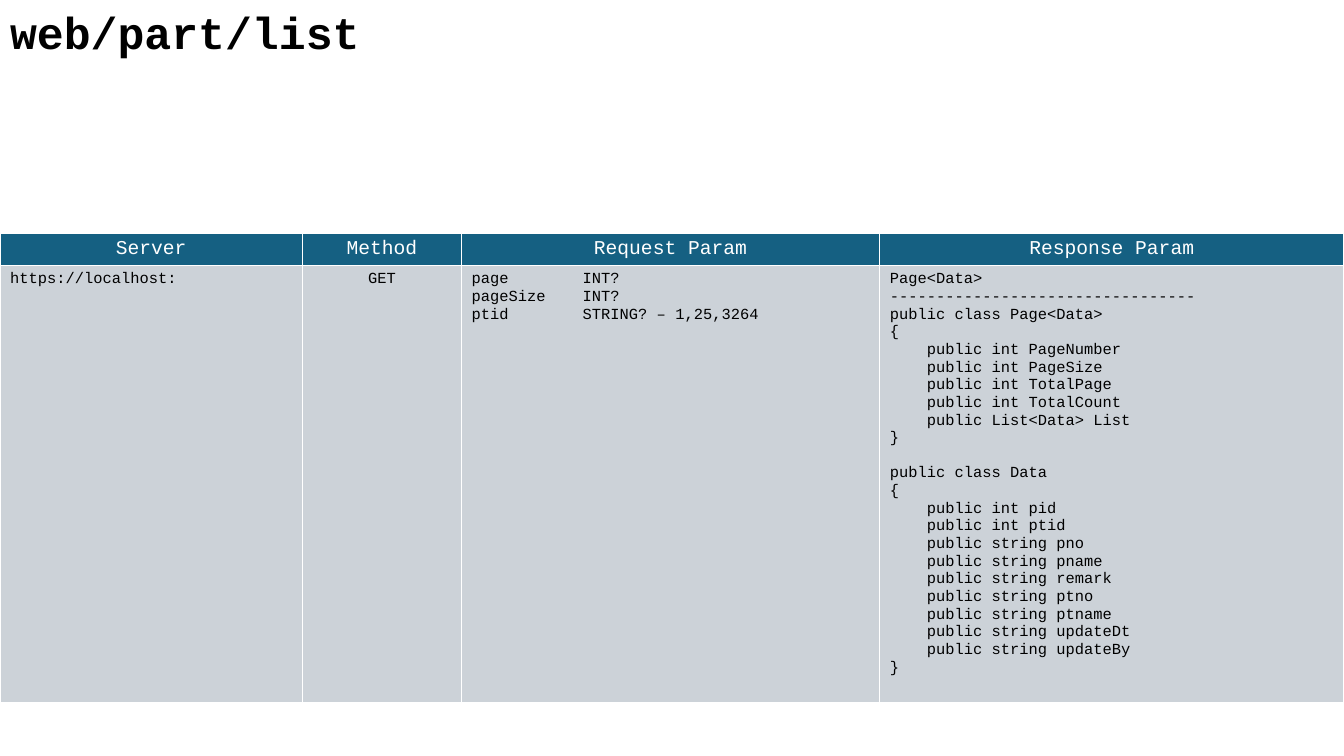
from dataclasses import dataclass

from lxml import etree
from pptx import Presentation
from pptx.dml.color import RGBColor
from pptx.enum import text as t
from pptx.oxml import ns
from pptx.util import Cm, Pt


@dataclass(frozen=True)
class Theme:
    font: str = "Courier New"
    ink: str = "000000"
    paper: str = "FFFFFF"
    header: str = "156082"
    body: str = "CCD2D8"
    title_size: int = 32
    header_size: int = 14
    body_size: int = 11
    line_height: float = 12.5


THEME = Theme()
LEFT, CENTER = t.PP_ALIGN.LEFT, t.PP_ALIGN.CENTER
COLUMN_WIDTHS = (7.62, 4.01, 10.54, 11.7)
HEADINGS = ("Server", "Method", "Request Param", "Response Param")
REQUEST = """page\tINT?
pageSize\tINT?
ptid\tSTRING? – 1,25,3264"""
PAGE_CLASS = """Page<Data>
---------------------------------
public class Page<Data>
{
    public int PageNumber
    public int PageSize
    public int TotalPage
    public int TotalCount
    public List<Data> List
}"""
DATA_CLASS = """public class Data
{
    public int pid
    public int ptid
    public string pno
    public string pname
    public string remark
    public string ptno
    public string ptname
    public string updateDt
    public string updateBy
}"""
ENDPOINT = (
    (("https://localhost:",), LEFT),
    (("GET",), CENTER),
    ((REQUEST,), LEFT),
    ((PAGE_CLASS, DATA_CLASS), LEFT),
)


def write(frame, *blocks, size, color=THEME.ink, bold=False, align=LEFT, tab=None):
    """Write each line as a paragraph, with a one-line gap between blocks."""
    lines = [(line, block > 0 and row == 0)
             for block, content in enumerate(blocks)
             for row, line in enumerate(content.split("\n"))]
    for index, (line, gap) in enumerate(lines):
        paragraph = frame.add_paragraph() if index else frame.paragraphs[0]
        paragraph.alignment = align
        if gap:
            paragraph.space_before = Pt(THEME.line_height)
        if tab and "\t" in line:
            stops = etree.SubElement(paragraph._p.get_or_add_pPr(), ns.qn("a:tabLst"))
            etree.SubElement(stops, ns.qn("a:tab"), pos=str(tab), algn="l")
        run = paragraph.add_run()
        run.text = line
        font = run.font
        font.name, font.size, font.bold = THEME.font, Pt(size), bold
        font.color.rgb = RGBColor.from_string(color)


def paint_cell(cell, fill):
    properties = cell._tc.get_or_add_tcPr()
    for side in ("lnL", "lnR", "lnT", "lnB"):
        border = etree.SubElement(properties, ns.qn(f"a:{side}"), w=str(Pt(1)))
        solid = etree.SubElement(border, ns.qn("a:solidFill"))
        etree.SubElement(solid, ns.qn("a:srgbClr"), val=THEME.paper)
    cell.fill.solid()
    cell.fill.fore_color.rgb = RGBColor.from_string(fill)


def place_title(slide, left, top, width, height):
    title = slide.shapes.title
    title.left, title.top, title.width, title.height = left, top, width, height
    frame = title.text_frame
    frame.word_wrap = True
    frame.auto_size = t.MSO_AUTO_SIZE.NONE
    frame.vertical_anchor = t.MSO_ANCHOR.TOP
    write(frame, "web/part/list", size=THEME.title_size, bold=True)


def place_endpoint_table(slide, left, top, width, height):
    table = slide.shapes.add_table(2, len(HEADINGS), left, top, width, height).table
    for column, column_width in zip(table.columns, COLUMN_WIDTHS):
        column.width = Cm(column_width)
    header_height = Cm(0.82)
    table.rows[0].height = header_height
    table.rows[1].height = height - header_height
    for column, (heading, (blocks, align)) in enumerate(zip(HEADINGS, ENDPOINT)):
        header, body = table.cell(0, column), table.cell(1, column)
        paint_cell(header, THEME.header)
        write(header.text_frame, heading, size=THEME.header_size,
              color=THEME.paper, align=CENTER)
        paint_cell(body, THEME.body)
        write(body.text_frame, *blocks, size=THEME.body_size, align=align, tab=Cm(2.8))


def main():
    deck = Presentation()
    deck.slide_width, deck.slide_height = Cm(33.87), Cm(19.05)
    slide = deck.slides.add_slide(deck.slide_layouts.get_by_name("Title Only"))
    place_title(slide, Cm(0), Cm(0), Cm(24), Cm(1.63))
    place_endpoint_table(slide, Cm(0), Cm(5.88), deck.slide_width, Cm(11.82))
    deck.save("out.pptx")


if __name__ == "__main__":
    main()
